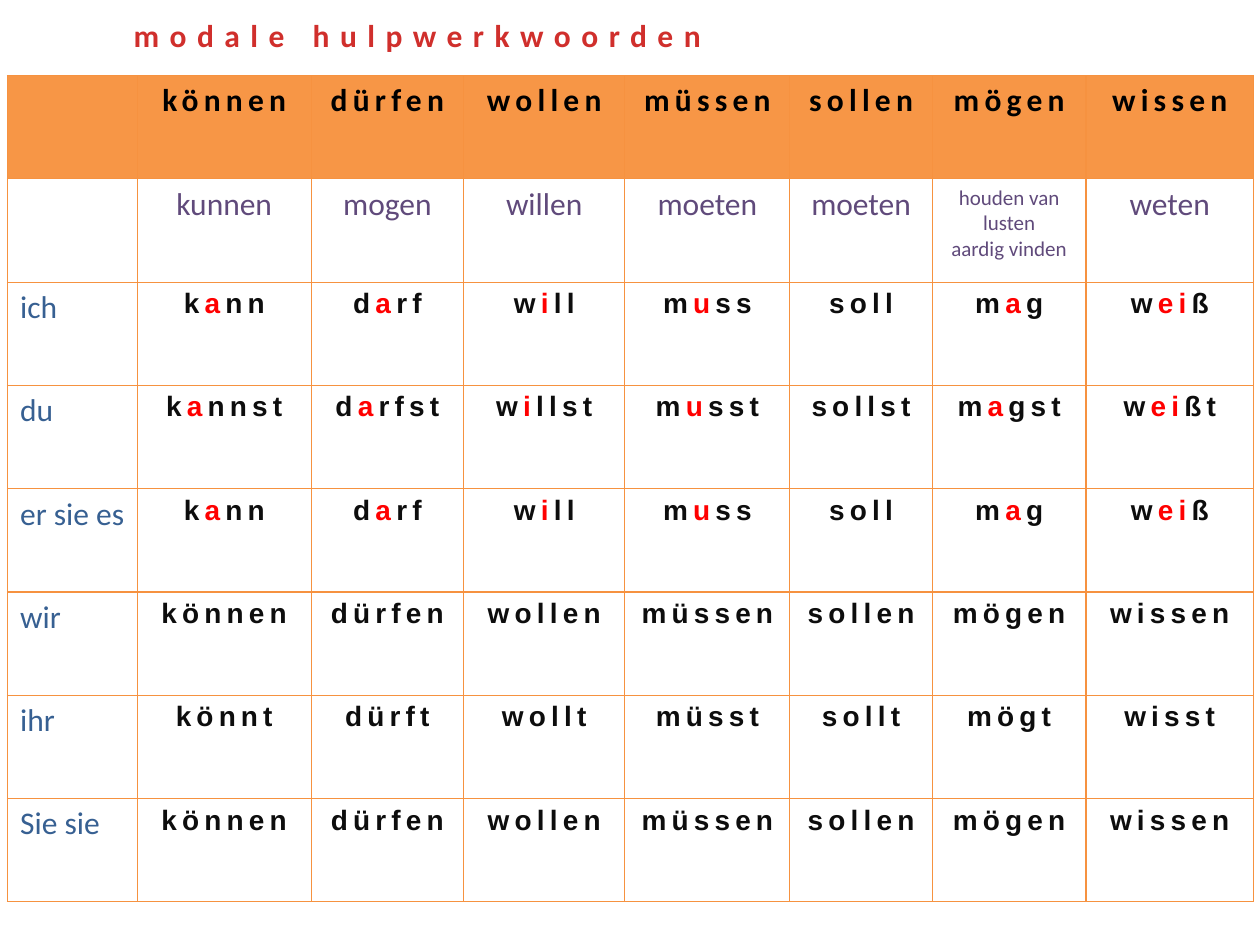
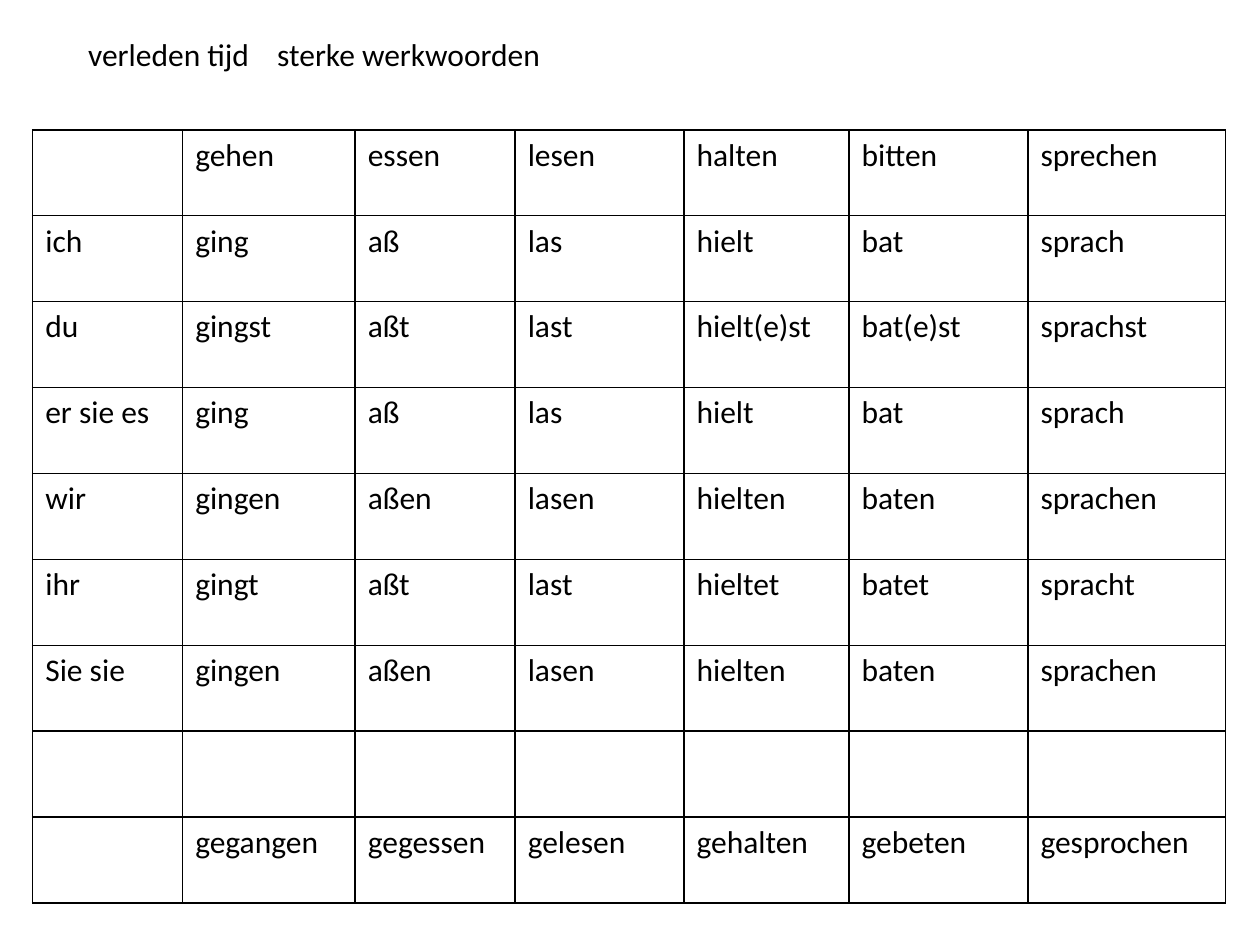
from lxml import etree
from pptx import Presentation
from pptx.dml.color import RGBColor as RGB
from pptx.enum.text import MSO_ANCHOR as Anchor, MSO_AUTO_SIZE as AutoSize, PP_ALIGN as Align
from pptx.oxml.ns import qn
from pptx.util import Inches, Pt

BLACK = RGB(0x00, 0x00, 0x00)
INK = RGB(0x0D, 0x0D, 0x0D)
WHITE = RGB(0xFF, 0xFF, 0xFF)
RED = RGB(0xFF, 0x00, 0x00)
ORANGE = RGB(0xF7, 0x96, 0x46)
ORANGE_LINE = RGB(0xF6, 0x92, 0x40)
PURPLE = RGB(0x60, 0x4A, 0x7B)
BLUE = RGB(0x37, 0x60, 0x92)
TITLE_STOPS = [(0, RGB(0xFC, 0x7C, 0x7A)), (75, RGB(0xD0, 0x2F, 0x2C)),
               (100, RGB(0xC7, 0x05, 0x00))]

PLAIN = {"name": "Calibri", "size": Pt(18), "bold": False}
STRONG = {**PLAIN, "bold": True}
VERB = {"name": "Arial", "size": Pt(16), "bold": True}
SMALL = {**PLAIN, "size": Pt(12)}

MODAL_COLS = [1.03, 1.38, 1.21, 1.28, 1.31, 1.13, 1.22, 1.33]
MODAL_ROWS = [
    ["", "können", "dürfen", "wollen", "müssen", "sollen", "mögen", "wissen"],
    ["", "kunnen", "mogen", "willen", "moeten", "moeten",
     "houden van lusten\naardig vinden", "weten"],
    ["ich", "k*a*nn", "d*a*rf", "w*i*ll", "m*u*ss", "soll", "m*a*g", "w*ei*ß"],
    ["du", "k*a*nnst", "d*a*rfst", "w*i*llst", "m*u*sst", "sollst", "m*a*gst", "w*ei*ßt"],
    ["er sie es", "k*a*nn", "d*a*rf", "w*i*ll", "m*u*ss", "soll", "m*a*g", "w*ei*ß"],
    ["wir", "können", "dürfen", "wollen", "müssen", "sollen", "mögen", "wissen"],
    ["ihr", "könnt", "dürft", "wollt", "müsst", "sollt", "mögt", "wisst"],
    ["Sie sie", "können", "dürfen", "wollen", "müssen", "sollen", "mögen", "wissen"],
]

PAST_COLS = [1.19, 1.37, 1.27, 1.34, 1.31, 1.42, 1.57]
PAST_ROWS = [
    ["", "gehen", "essen", "lesen", "halten", "bitten", "sprechen"],
    ["ich", "ging", "aß", "las", "hielt", "bat", "sprach"],
    ["du", "gingst", "aßt", "last", "hielt(e)st", "bat(e)st", "sprachst"],
    ["er sie es", "ging", "aß", "las", "hielt", "bat", "sprach"],
    ["wir", "gingen", "aßen", "lasen", "hielten", "baten", "sprachen"],
    ["ihr", "gingt", "aßt", "last", "hieltet", "batet", "spracht"],
    ["Sie sie", "gingen", "aßen", "lasen", "hielten", "baten", "sprachen"],
    [""] * 7,
    ["", "gegangen", "gegessen", "gelesen", "gehalten", "gebeten", "gesprochen"],
]


def add_run(p, text, fmt, color, spacing=0):
    r = p.add_run()
    r.text = text
    for key, value in fmt.items():
        setattr(r.font, key, value)
    r.font.color.rgb = color
    if spacing:
        r.font._element.set("spc", str(spacing * 100))
    return r


def gradient_text(r, stops):
    rpr = r.font._element
    rpr.remove(rpr.find(qn("a:solidFill")))
    grad = etree.Element(qn("a:gradFill"))
    rpr.insert(0, grad)
    gs_list = etree.SubElement(grad, qn("a:gsLst"))
    for pos, color in stops:
        gs = etree.SubElement(gs_list, qn("a:gs"), pos=str(pos * 1000))
        etree.SubElement(gs, qn("a:srgbClr"), val=str(color))
    etree.SubElement(grad, qn("a:lin"), ang="5400000", scaled="0")


def add_tab_stop(p, pos):
    tabs = etree.SubElement(p._p.get_or_add_pPr(), qn("a:tabLst"))
    etree.SubElement(tabs, qn("a:tab"), pos=str(pos), algn="l")


def add_title(slide, box, text, fmt, color, spacing=0):
    sp = slide.shapes.title
    sp.left, sp.top, sp.width, sp.height = map(Inches, box)
    tf = sp.text_frame
    tf.word_wrap = False
    tf.auto_size = AutoSize.SHAPE_TO_FIT_TEXT
    tf.vertical_anchor = Anchor.TOP
    p = tf.paragraphs[0]
    p.alignment = Align.LEFT
    return p, add_run(p, text, fmt, color, spacing)


def set_borders(cell, color, width):
    tcpr = cell._tc.get_or_add_tcPr()
    for side in "LRTB":
        ln = etree.SubElement(tcpr, qn(f"a:ln{side}"), w=str(Pt(width)))
        fill = etree.SubElement(ln, qn("a:solidFill"))
        etree.SubElement(fill, qn("a:srgbClr"), val=str(color))


def fill_cell(cell, text, style):
    fmt, color, spacing, align = style
    for i, line in enumerate(text.split("\n") if text else []):
        tf = cell.text_frame
        p = tf.add_paragraph() if i else tf.paragraphs[0]
        p.alignment = align
        for j, part in enumerate(line.split("*")):
            add_run(p, part, fmt, RED if j % 2 else color, spacing)


def add_grid(slide, box, cols, rows, line, style_of, header_fill=WHITE):
    x, y, w, h = map(Inches, box)
    table = slide.shapes.add_table(len(rows), len(cols), x, y, w, h).table
    table.first_row = table.horz_banding = False
    for col, width in zip(table.columns, cols):
        col.width = Inches(width)
    for i, row in enumerate(rows):
        table.rows[i].height = h // len(rows)
        for j, text in enumerate(row):
            cell = table.cell(i, j)
            set_borders(cell, *line)
            cell.fill.solid()
            cell.fill.fore_color.rgb = WHITE if i else header_fill
            fill_cell(cell, text, style_of(i, j, text))


def modal_style(i, j, text):
    if i == 0:
        return STRONG, BLACK, 3, Align.CENTER
    if i == 1:
        return SMALL if "\n" in text else PLAIN, PURPLE, 0, Align.CENTER
    if j == 0:
        return PLAIN, BLUE, 0, Align.LEFT
    return VERB, INK, 3, Align.CENTER


def past_style(i, j, text):
    return PLAIN, BLACK, 0, Align.LEFT


def modal_slide(slide):
    add_grid(slide, (0.06, 0.6, 9.89, 6.56), MODAL_COLS, MODAL_ROWS,
             (ORANGE_LINE, 0.75), modal_style, ORANGE)
    p, r = add_title(slide, (0.96, 0.08, 4.76, 0.4), "modale hulpwerkwoorden",
                     STRONG, RED, 6)
    gradient_text(r, TITLE_STOPS)


def past_slide(slide):
    add_grid(slide, (0.26, 1.03, 9.48, 6.14), PAST_COLS, PAST_ROWS,
             (BLACK, 1), past_style)
    p, r = add_title(slide, (0.6, 0.23, 3.85, 0.4), "verleden tijd\tsterke werkwoorden",
                     PLAIN, BLACK)
    add_tab_stop(p, Inches(1.5))


def main():
    prs = Presentation()
    prs.slide_width, prs.slide_height = Inches(10), Inches(7.5)
    for build in (modal_slide, past_slide):
        build(prs.slides.add_slide(prs.slide_layouts[5]))
    prs.save("out.pptx")


if __name__ == "__main__":
    main()
